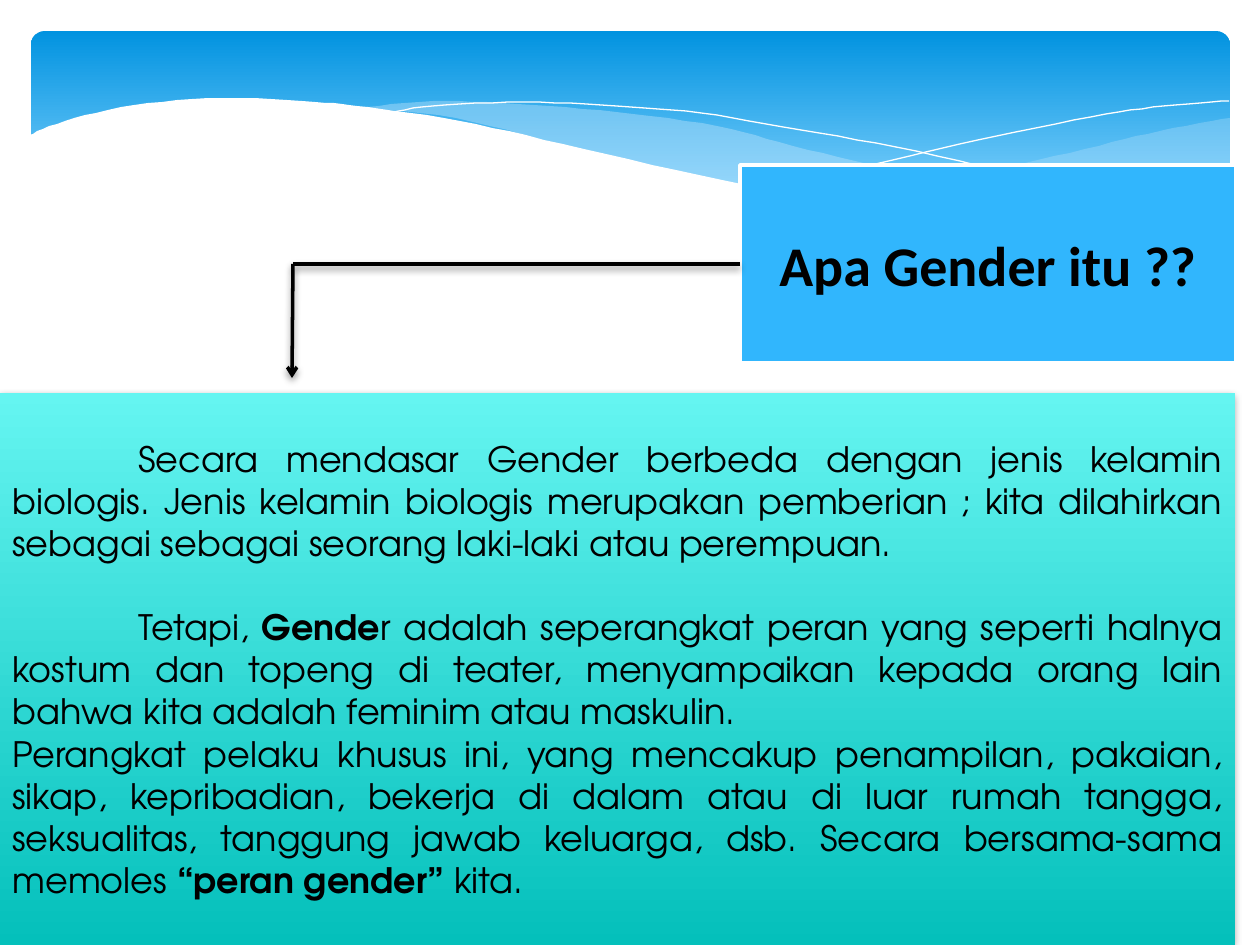
from lxml.etree import SubElement
from pptx import Presentation
from pptx.dml.color import RGBColor
from pptx.enum.shapes import MSO_CONNECTOR, MSO_SHAPE
from pptx.enum.text import MSO_ANCHOR, MSO_AUTO_SIZE, PP_ALIGN
from pptx.oxml.ns import qn
from pptx.util import Emu, Pt

SCALE = 914400 / 126  # EMU per px
COLORS = {
    "black": "000000", "white": "FFFFFF", "title": "31B6FD", "wave": "C6E7FC",
    "banner_top": "0293E0", "banner_bottom": "83D3FE",
    "panel_top": "65F5F1", "panel_bottom": "04C0BB",
}
TITLE = "Apa Gender itu ??"
# Each paragraph: first-line indent in px, space before in pt, (text, bold) runs
BODY = [
    (126, 0, [("Secara mendasar Gender berbeda dengan jenis kelamin biologis. "
               "Jenis kelamin biologis merupakan pemberian ; kita dilahirkan "
               "sebagai sebagai seorang laki-laki atau perempuan.", False)]),
    (126, 24, [("Tetapi, ", False), ("Gende", True),
               ("r adalah seperangkat peran yang seperti halnya kostum dan topeng "
                "di teater, menyampaikan kepada orang lain bahwa kita adalah "
                "feminim atau maskulin.", False)]),
    (0, 0, [("Perangkat pelaku khusus ini, yang mencakup penampilan, pakaian, sikap, "
             "kepribadian, bekerja di dalam atau di luar rumah tangga, seksualitas, "
             "tanggung jawab keluarga, dsb. Secara bersama-sama memoles ", False),
            ("“peran gender” ", True), ("kita.", False)]),
]
# Each filled wave: curves joined end to end, colour, opacity in percent
WAVES = [
    ([[(1230, 118), (1160, 131), (1085, 149), (982, 173), (833, 202)],
      [(833, 202), (941, 213), (1038, 217), (1130, 208), (1192, 193), (1230, 178)]],
     "wave", 29),
    ([[(360, 108), (433, 101), (517, 104), (616, 112), (717, 126), (793, 146),
       (890, 169), (1016, 194), (1125, 210)],
      [(1125, 210), (1043, 218), (943, 213), (819, 199), (713, 180), (566, 146),
       (456, 118), (360, 108)]],
     "wave", 40),
]
HAIRLINES = [
    [(389, 113), (433, 106), (524, 102), (616, 106), (701, 113), (801, 130),
     (916, 151), (1047, 183), (1143, 209)],
    [(772, 190), (876, 164), (978, 140), (1091, 117), (1164, 106), (1229, 101)],
]
FRONT_WAVE = ([
    [(29, 135), (65, 121), (134, 105), (223, 98), (315, 102), (368, 107), (460, 121),
     (563, 144), (699, 175), (842, 201), (980, 214), (1071, 214), (1159, 203),
     (1231, 178)],
    [(1231, 282), (29, 282)],
], "white", 100)
ARROW = [(740, 264), (293, 264), (292, 378)]


def px(n):
    return Emu(round(n * SCALE))


def rgb(name):
    return RGBColor.from_string(COLORS[name])


def smooth(points, steps=6):
    """Return points along a Catmull-Rom curve through the given points."""
    padded = [points[0], *points, points[-1]]
    curve = [points[0]]
    for a, b, c, d in zip(padded, padded[1:], padded[2:], padded[3:]):
        for i in range(1, steps + 1):
            t = i / steps
            curve.append(tuple(
                (2 * q + (r - p) * t + (2 * p - 5 * q + 4 * r - s) * t ** 2
                 + (3 * q - p - 3 * r + s) * t ** 3) / 2
                for p, q, r, s in zip(a, b, c, d)))
    return curve


def add_outline(shapes, points, close):
    builder = shapes.build_freeform(*points[0], scale=SCALE)
    builder.add_line_segments(points[1:], close=close)
    sp = builder.convert_to_shape()
    sp.shadow.inherit = False
    return sp


def add_wave(shapes, curves, color, opacity):
    points = [pt for c in curves for pt in (smooth(c) if len(c) > 2 else c)]
    sp = add_outline(shapes, points, True)
    sp.fill.solid()
    sp.fill.fore_color.rgb = rgb(color)
    sp.line.fill.background()
    if opacity < 100:
        clr = sp.fill._xPr.find(".//" + qn("a:srgbClr"))
        SubElement(clr, qn("a:alpha"), val=str(opacity * 1000))


def add_hairline(shapes, points):
    sp = add_outline(shapes, smooth(points), False)
    sp.fill.background()
    sp.line.color.rgb = rgb("white")
    sp.line.width = Pt(0)


def add_gradient_box(shapes, kind, box, top, bottom, end):
    sp = shapes.add_shape(kind, *map(px, box))
    sp.shadow.inherit = False
    sp.line.fill.background()
    sp.fill.gradient()
    sp.fill.gradient_angle = 270
    for stop, color, position in zip(sp.fill.gradient_stops, (top, bottom), (0, end)):
        stop.color.rgb = rgb(color)
        stop.position = position
    return sp


def add_shadow(sp):
    spPr = sp._element.spPr
    effects = spPr.find(qn("a:effectLst"))
    if effects is None:
        effects = SubElement(spPr, qn("a:effectLst"))
    shadow = SubElement(effects, qn("a:outerShdw"), blurRad=str(Pt(4)),
                        dist=str(Pt(2)), dir="5400000", rotWithShape="0")
    clr = SubElement(shadow, qn("a:srgbClr"), val=COLORS["black"])
    SubElement(clr, qn("a:alpha"), val="38000")


def add_arrow(shapes, points):
    for start, end in zip(points, points[1:]):
        line = shapes.add_connector(MSO_CONNECTOR.STRAIGHT, *map(px, start + end))
        line.line.color.rgb = rgb("black")
        line.line.width = Pt(2)
        if end == points[-1]:
            SubElement(line.line._get_or_add_ln(), qn("a:tailEnd"), type="arrow")
        add_shadow(line)


def format_run(r, font, size, bold):
    r.font.name, r.font.size, r.font.bold = font, Pt(size), bold
    r.font.color.rgb = rgb("black")


def format_title(title):
    title.left, title.top, title.width, title.height = map(px, (740, 165, 496, 198))
    geometry = SubElement(title._element.spPr, qn("a:prstGeom"), prst="roundRect")
    SubElement(geometry, qn("a:avLst"))
    title.fill.solid()
    title.fill.fore_color.rgb = rgb("title")
    title.line.color.rgb = rgb("white")
    title.line.width = Pt(2)
    tf = title.text_frame
    tf.text = TITLE
    tf.word_wrap = True
    tf.auto_size = MSO_AUTO_SIZE.NONE
    tf.vertical_anchor = MSO_ANCHOR.MIDDLE
    tf.paragraphs[0].alignment = PP_ALIGN.CENTER
    format_run(tf.paragraphs[0].runs[0], "Calibri", 32, True)


def fill_body(tf):
    tf.word_wrap = True
    tf.vertical_anchor = MSO_ANCHOR.MIDDLE
    for i, (indent, before, runs) in enumerate(BODY):
        p = tf.add_paragraph() if i else tf.paragraphs[0]
        p.alignment = PP_ALIGN.JUSTIFY
        p.space_before = Pt(before)
        p._p.get_or_add_pPr().set("indent", str(px(indent)))
        for text, bold in runs:
            r = p.add_run()
            r.text = text
            format_run(r, "TeX Gyre Adventor", 20, bold)


def main():
    prs = Presentation()
    prs.slide_width, prs.slide_height = px(1260), px(945)
    slide = prs.slides.add_slide(prs.slide_layouts[5])
    shapes = slide.shapes

    banner = add_gradient_box(shapes, MSO_SHAPE.ROUNDED_RECTANGLE, (31, 31, 1199, 197),
                              "banner_top", "banner_bottom", 0.9)
    banner.adjustments[0] = 0.07
    for wave in WAVES:
        add_wave(shapes, *wave)
    for points in HAIRLINES:
        add_hairline(shapes, points)
    add_wave(shapes, *FRONT_WAVE)

    title = shapes.title
    format_title(title)
    shapes._spTree.append(title._element)  # bring the title in front of the banner
    add_arrow(shapes, ARROW)
    panel = add_gradient_box(shapes, MSO_SHAPE.RECTANGLE, (0, 393, 1235, 552),
                             "panel_top", "panel_bottom", 1)
    add_shadow(panel)
    fill_body(panel.text_frame)
    prs.save("out.pptx")


if __name__ == "__main__":
    main()
